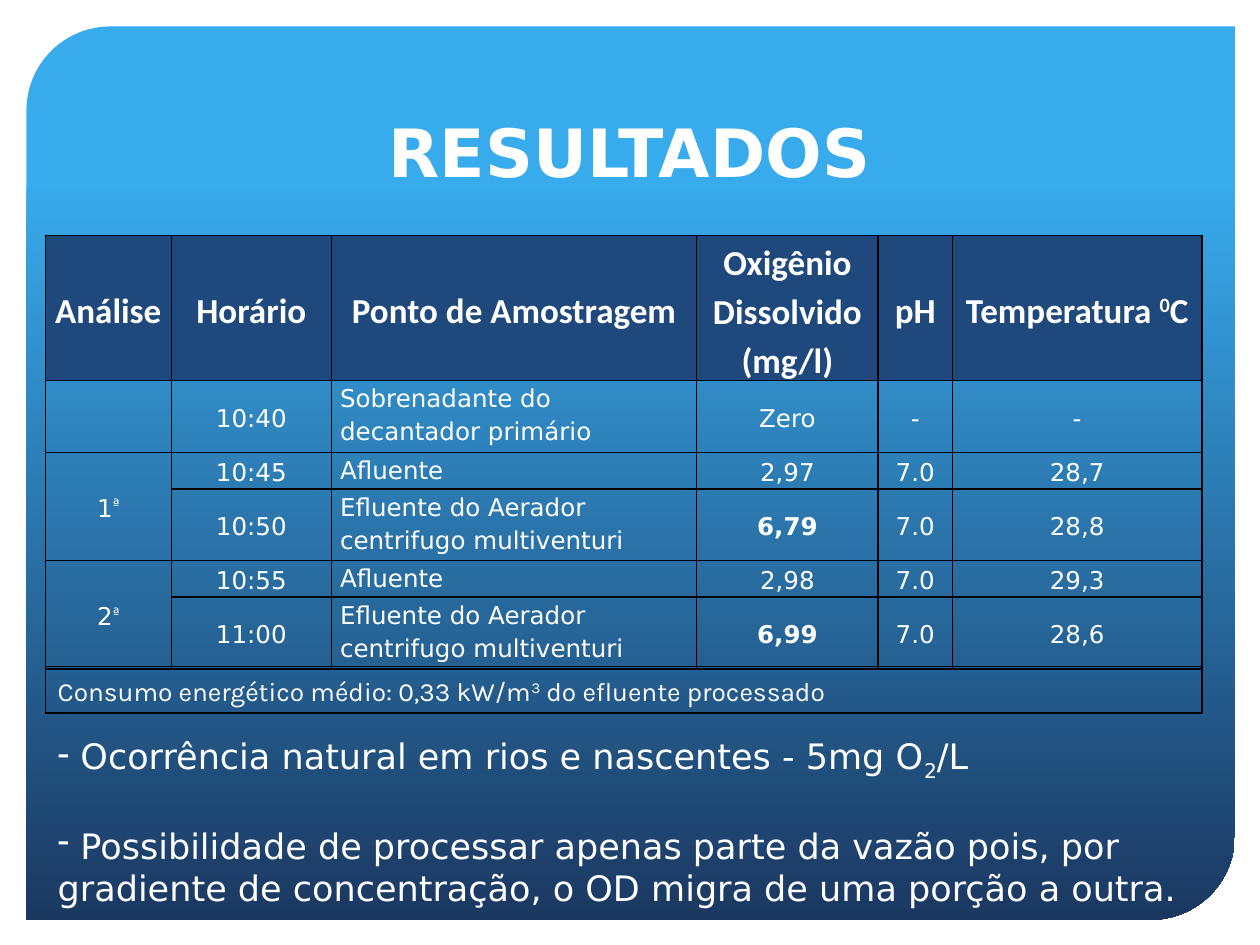
from lxml import etree
from pptx import Presentation
from pptx.dml.color import RGBColor
from pptx.enum.shapes import MSO_SHAPE
from pptx.enum.text import MSO_ANCHOR, PP_ALIGN
from pptx.oxml.ns import qn
from pptx.util import Inches, Pt

LEFT, CENTER = PP_ALIGN.LEFT, PP_ALIGN.CENTER
TOP, MIDDLE, BOTTOM = MSO_ANCHOR.TOP, MSO_ANCHOR.MIDDLE, MSO_ANCHOR.BOTTOM
PANEL_SHAPE, FRAME_SHAPE = MSO_SHAPE.ROUND_2_DIAG_RECTANGLE, MSO_SHAPE.RECTANGLE
WHITE, BLACK, NAVY = "FFFFFF", "000000", "1F497D"
SUPER, SUB = 30, -25

TITLE_FONT = {"name": "DejaVu Sans", "size": Pt(38), "bold": True}
HEADER_FONT = {"name": "Calibri", "size": Pt(20), "bold": True}
CELL_FONT = {"name": "DejaVu Sans", "size": Pt(14), "bold": False}
STRONG_FONT = {**CELL_FONT, "bold": True}
CAPTION_FONT = {"name": "Karla", "size": Pt(15)}
NOTE_FONT = {"name": "DejaVu Sans", "size": Pt(20)}

COLUMN_WIDTHS = [1, 1.27, 2.9, 1.44, 0.59, 1.98]
ROW_HEIGHTS = [1.15, 0.57, 0.29, 0.57, 0.29, 0.57]
POINT_COLUMN, OXYGEN_COLUMN = 2, 3
AERATOR = "Efluente do Aerador centrifugo multiventuri"

# A text is a plain string or a list of strings and (string, baseline) pairs
RESULTS = [
    ["Análise", "Horário", "Ponto de Amostragem", "Oxigênio Dissolvido (mg/l)",
     "pH", ["Temperatura ", ("0", SUPER), "C"]],
    ["", "10:40", "Sobrenadante do decantador primário", "Zero", "-", "-"],
    [["1", ("ª", SUPER)], "10:45", "Afluente", "2,97", "7.0", "28,7"],
    ["", "10:50", AERATOR, "6,79", "7.0", "28,8"],
    [["2", ("ª", SUPER)], "10:55", "Afluente", "2,98", "7.0", "29,3"],
    ["", "11:00", AERATOR, "6,99", "7.0", "28,6"],
]
ANALYSIS_STARTS = (2, 4)
AERATOR_ROWS = (3, 5)
CONSUMPTION = ["Consumo energético médio: 0,33 kW/m", ("3", SUPER),
               " do efluente processado"]
NOTES = [
    [" Ocorrência natural em rios e nascentes - 5mg O", ("2", SUB), "/L"],
    " Possibilidade de processar apenas parte da vazão pois, "
    "por gradiente de concentração, o OD migra de uma porção a outra.",
]


def color(hex_value):
    return RGBColor.from_string(hex_value)


def write(paragraph, text, font_format, align=LEFT):
    paragraph.alignment = align
    for part in [text] if isinstance(text, str) else text:
        words, baseline = (part, 0) if isinstance(part, str) else part
        run = paragraph.add_run()
        run.text = words
        for attribute, value in font_format.items():
            setattr(run.font, attribute, value)
        run.font.color.rgb = color(WHITE)
        if baseline:
            run.font._element.set("baseline", str(baseline * 1000))


def add_text(slide, box, paragraphs, font_format, align=LEFT, anchor=TOP,
             bullet=None, gap=0):
    frame = slide.shapes.add_textbox(*map(Inches, box)).text_frame
    frame.word_wrap = True
    frame.vertical_anchor = anchor
    for index, text in enumerate(paragraphs):
        paragraph = frame.add_paragraph() if index else frame.paragraphs[0]
        if bullet:
            properties = paragraph._p.get_or_add_pPr()
            etree.SubElement(properties, qn("a:buChar")).set("char", bullet)
        if index:
            paragraph.space_before = Pt(gap)
        write(paragraph, text, font_format, align)


def add_panel(slide, box):
    panel = slide.shapes.add_shape(PANEL_SHAPE, *map(Inches, box))
    panel.shadow.inherit = False
    panel.adjustments[0], panel.adjustments[1] = 0.094, 0
    panel.line.fill.background()
    panel.fill.gradient()
    panel.fill.gradient_angle = 270
    stops = [(0.17, "38ABED"), (1, "1B3861")]
    for stop, (position, shade) in zip(panel.fill.gradient_stops, stops):
        stop.position = position
        stop.color.rgb = color(shade)


def add_borders(cell):
    properties = cell._tc.get_or_add_tcPr()
    for side in ("a:lnL", "a:lnR", "a:lnT", "a:lnB"):
        border = etree.SubElement(properties, qn(side), w=str(Pt(1)))
        fill = etree.SubElement(border, qn("a:solidFill"))
        etree.SubElement(fill, qn("a:srgbClr"), val=BLACK)


def fill_cell(cell, text, row, column):
    add_borders(cell)
    is_header = row == 0
    is_point = column == POINT_COLUMN and not is_header
    cell_format = {
        "margin_left": Inches(0.07), "margin_right": Inches(0.07),
        "margin_top": 0, "margin_bottom": 0,
        "vertical_anchor": TOP if is_point else MIDDLE,
    }
    for attribute, value in cell_format.items():
        setattr(cell, attribute, value)
    if is_header:
        cell.fill.solid()
        cell.fill.fore_color.rgb = color(NAVY)
        font_format = HEADER_FONT
    else:
        cell.fill.background()
        is_strong = column == OXYGEN_COLUMN and row in AERATOR_ROWS
        font_format = STRONG_FONT if is_strong else CELL_FONT
    if text:
        paragraph = cell.text_frame.paragraphs[0]
        paragraph.line_spacing = 1.15
        write(paragraph, text, font_format, LEFT if is_point else CENTER)


def add_results(slide, box):
    table = slide.shapes.add_table(
        len(ROW_HEIGHTS), len(COLUMN_WIDTHS), *map(Inches, box)).table
    table.first_row = table.horz_banding = False
    for column, width in zip(table.columns, COLUMN_WIDTHS):
        column.width = Inches(width)
    for row, height in zip(table.rows, ROW_HEIGHTS):
        row.height = Inches(height)
    for row, texts in enumerate(RESULTS):
        for column, text in enumerate(texts):
            fill_cell(table.cell(row, column), text, row, column)
    # Each analysis covers an inflow row and an outflow row
    for start in ANALYSIS_STARTS:
        table.cell(start, 0).merge(table.cell(start + 1, 0))


def add_consumption(slide, box):
    left, top, width, height = box
    add_text(slide, (left, top + 0.02, width, height - 0.02),
             [CONSUMPTION], CAPTION_FONT)
    frame = slide.shapes.add_shape(FRAME_SHAPE, *map(Inches, box))
    frame.shadow.inherit = False
    frame.fill.background()
    frame.line.color.rgb = color(BLACK)
    frame.line.width = Pt(0.75)


def main():
    presentation = Presentation()
    presentation.slide_width = Inches(10)
    presentation.slide_height = Inches(7.5)
    slide = presentation.slides.add_slide(presentation.slide_layouts[6])

    # Background panel and title
    add_panel(slide, (0.21, 0.21, 9.59, 7.09))
    add_text(slide, (0.85, 0.42, 8.29, 1.14), ["RESULTADOS"], TITLE_FONT,
             CENTER, BOTTOM)
    # Notes, energy use and measurements
    add_text(slide, (0.36, 5.78, 9.18, 1.45), NOTES, NOTE_FONT,
             bullet="-", gap=24)
    add_consumption(slide, (0.36, 5.29, 9.18, 0.37))
    add_results(slide, (0.36, 1.87, 9.18, 3.44))

    presentation.save("out.pptx")


if __name__ == "__main__":
    main()
